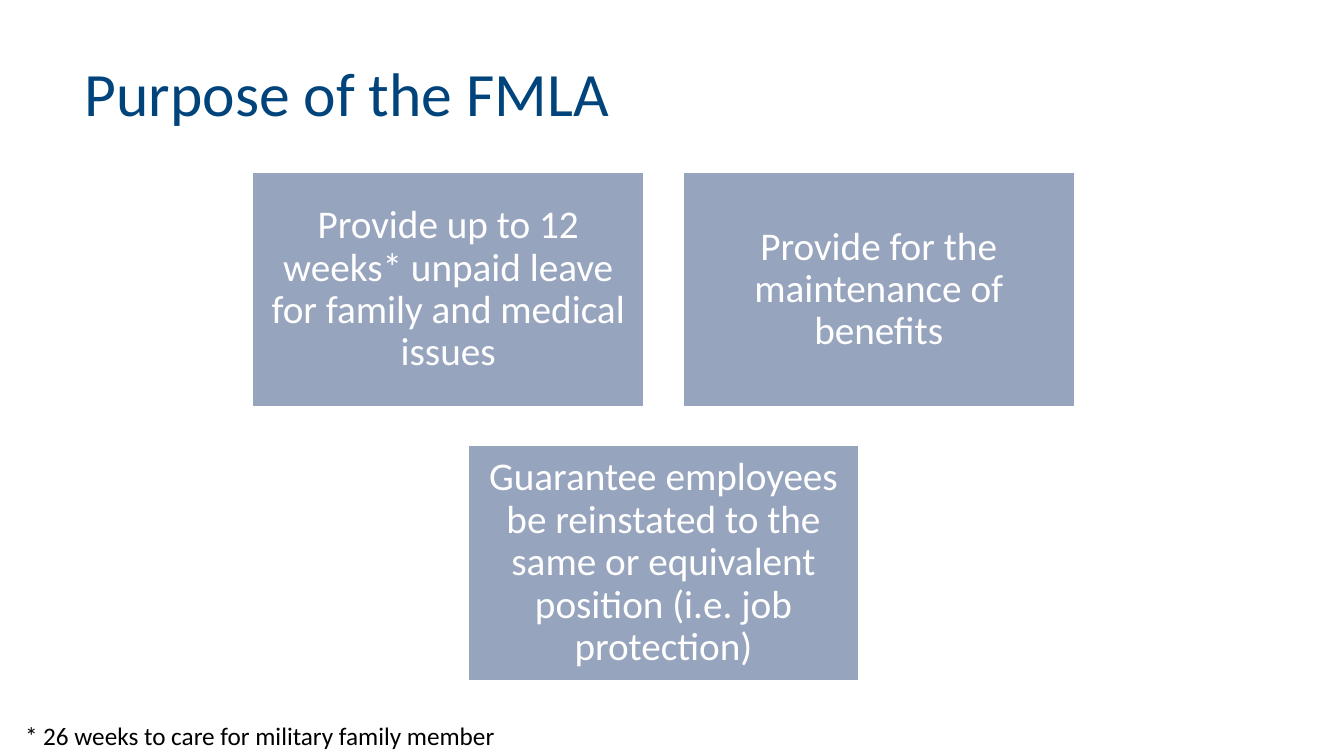
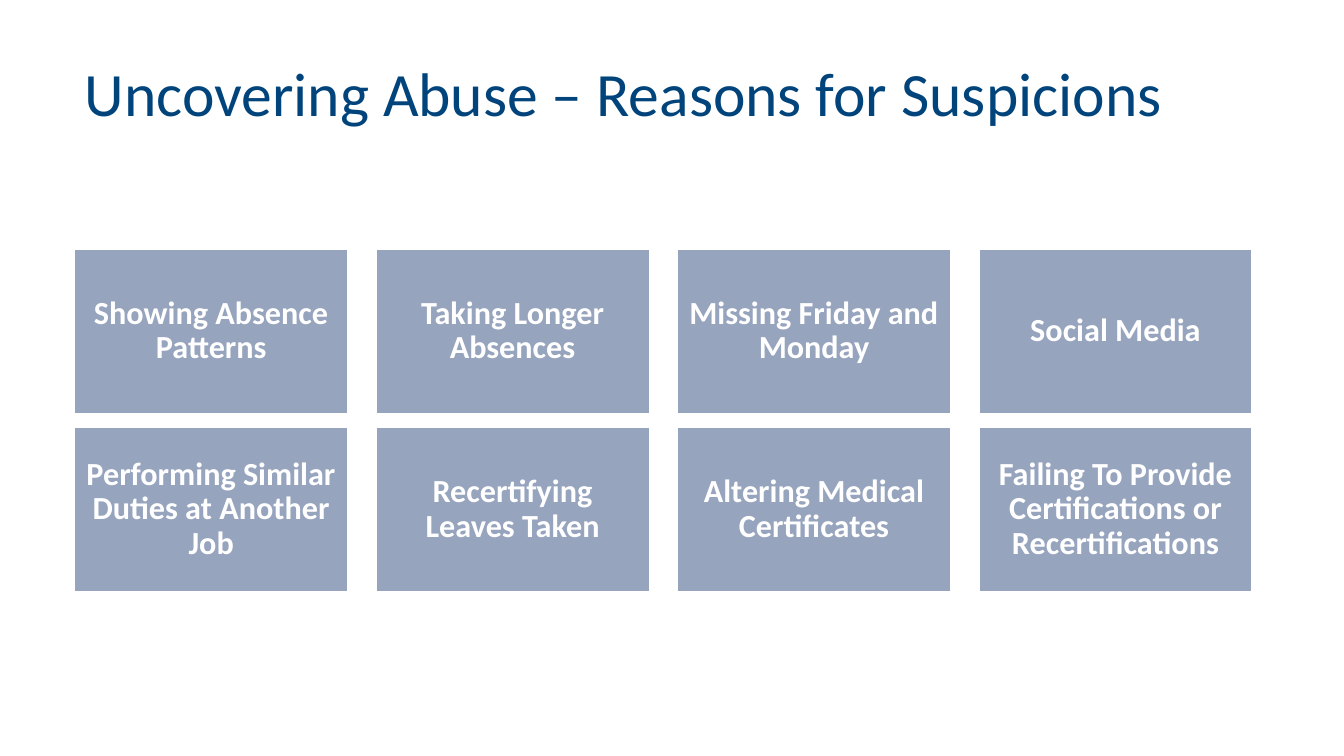
from pptx import Presentation
from pptx.dml.color import RGBColor as RGB
from pptx.enum.shapes import MSO_SHAPE as Shape
from pptx.enum.text import MSO_ANCHOR as Anchor, MSO_AUTO_SIZE as Fit, PP_ALIGN as Align
from pptx.util import Inches, Pt

FONT = "Calibri"
HUE = {"title": "00447B", "box": "97A4BE", "white": "FFFFFF", "note": "000000"}
LEFT = 0.74

deck = Presentation()
deck.slide_width, deck.slide_height = Inches(13.33), Inches(7.5)


def write(shape, text, size, hue, align=Align.LEFT, pad=None, bold=False, space=0.9):
    """Fill a shape with one styled paragraph; pad is the inset on all sides."""
    frame = shape.text_frame
    frame.text = text
    frame.word_wrap = True
    if pad is not None:
        frame.margin_left = frame.margin_right = Inches(pad)
        frame.margin_top = frame.margin_bottom = Inches(pad)
    para = frame.paragraphs[0]
    para.alignment, para.line_spacing = align, space
    font = para.runs[0].font
    font.name, font.size, font.bold = FONT, Pt(size), bold
    font.color.rgb = RGB.from_string(HUE[hue])


pages = [
    {
        "title": "Purpose of the FMLA",
        "rows": [
            ["Provide up to 12 weeks* unpaid leave for family and medical issues",
             "Provide for the maintenance of benefits"],
            ["Guarantee employees be reinstated to the same or equivalent position "
             "(i.e. job protection)"],
        ],
        "top": 1.71, "box": (3.88, 2.33), "step": (4.27, 2.71),
        "size": 28, "pad": 0.12, "bold": False,
        "note": "* 26 weeks to care for military family member",
    },
    {
        "title": "Uncovering Abuse – Reasons for Suspicions",
        "rows": [
            ["Showing Absence Patterns", "Taking Longer Absences",
             "Missing Friday and Monday", "Social Media"],
            ["Performing Similar Duties at Another Job", "Recertifying Leaves Taken",
             "Altering Medical Certificates",
             "Failing To Provide Certifications or Recertifications"],
        ],
        "top": 2.47, "box": (2.71, 1.63), "step": (2.99, 1.77),
        "size": 23, "pad": 0.1, "bold": True,
        "note": None,
    },
]

TITLE_W = 11.68
MID = LEFT + TITLE_W / 2

for page in pages:
    slide = deck.slides.add_slide(deck.slide_layouts[5])
    title = slide.shapes.title
    title.left, title.top = Inches(LEFT), Inches(0.4)
    title.width, title.height = Inches(TITLE_W), Inches(1.11)
    write(title, page["title"], 44, "title")
    title.text_frame.auto_size = Fit.NONE
    title.text_frame.vertical_anchor = Anchor.MIDDLE

    # Each row of boxes is centred under the title.
    wide, high = page["box"]
    across, down = page["step"]
    for row, texts in enumerate(page["rows"]):
        start = MID - ((len(texts) - 1) * across + wide) / 2
        for col, text in enumerate(texts):
            box = slide.shapes.add_shape(
                Shape.RECTANGLE, Inches(start + col * across),
                Inches(page["top"] + row * down), Inches(wide), Inches(high))
            box.shadow.inherit = False
            box.fill.solid()
            box.fill.fore_color.rgb = RGB.from_string(HUE["box"])
            box.line.color.rgb = RGB.from_string(HUE["white"])
            box.line.width = Pt(1)
            box.text_frame.vertical_anchor = Anchor.MIDDLE
            write(box, text, page["size"], "white", Align.CENTER, page["pad"], page["bold"])

    if page["note"]:
        note = slide.shapes.add_textbox(Inches(0.15), Inches(7.1), Inches(6.66), Inches(0.4))
        write(note, page["note"], 18, "note", space=1.0)

deck.save("out.pptx")
